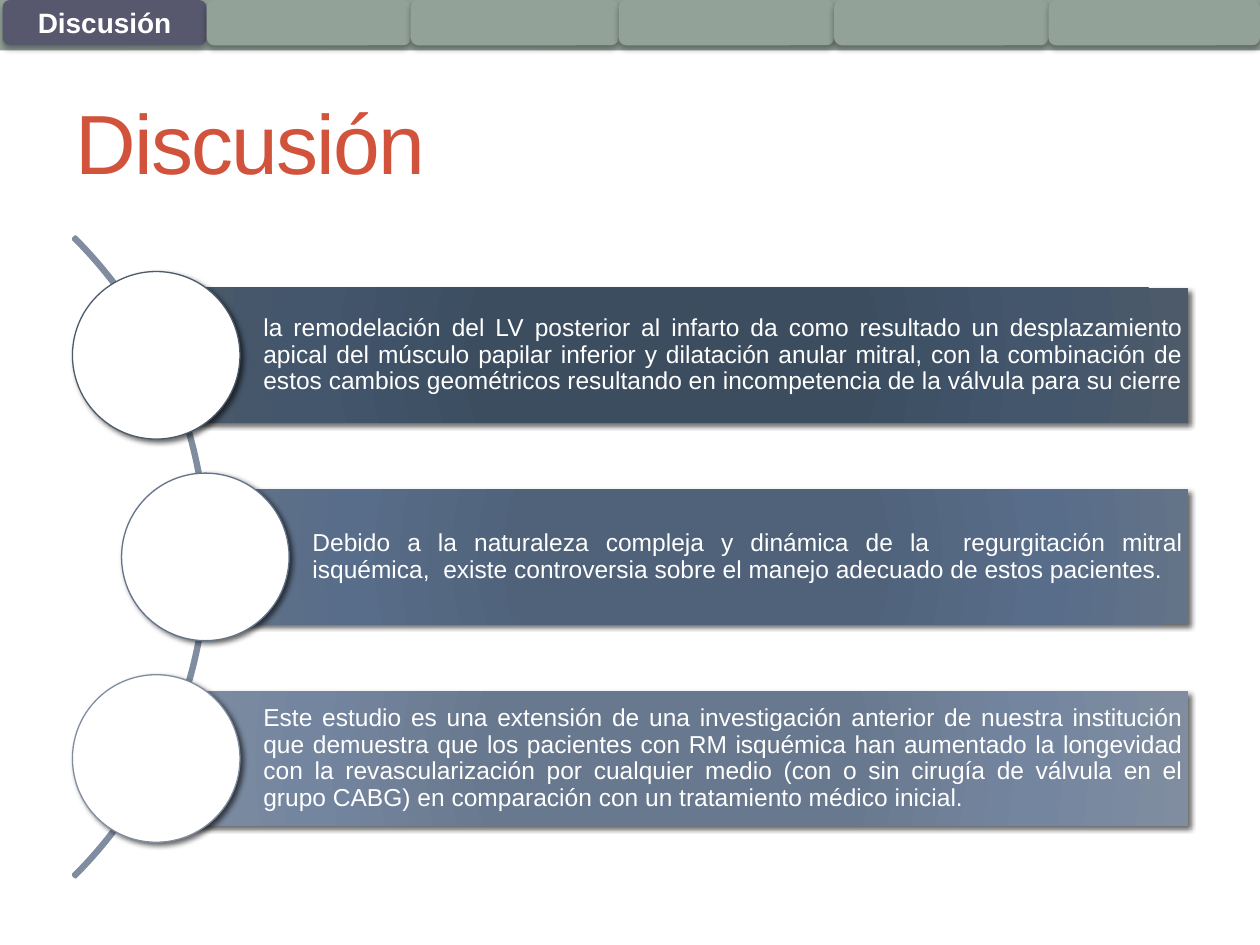
import pptx
import pptx.util
import pptx.dml.color
import pptx.enum.shapes
import pptx.enum.text
import pptx.oxml
import pptx.oxml.ns

RGB = pptx.dml.color.RGBColor
KIND = pptx.enum.shapes.MSO_SHAPE
ALIGN = pptx.enum.text.PP_ALIGN
MIDDLE = pptx.enum.text.MSO_ANCHOR.MIDDLE
Inches, Pt = pptx.util.Inches, pptx.util.Pt
qn = pptx.oxml.ns.qn
NS = pptx.oxml.ns.nsdecls("a")

WHITE = RGB(0xFF, 0xFF, 0xFF)
BLACK = RGB(0, 0, 0)
SAGE = RGB(0x93, 0xA2, 0x99)
PLUM = RGB(0x57, 0x57, 0x6E)
RED = RGB(0xD2, 0x53, 0x3C)
STEEL = RGB(0x80, 0x8D, 0xA0)

WIDE, HIGH = 10, 7.5
TITLE = "Discusión"
EDGES = [0.02, 1.64, 3.26, 4.91, 6.62, 8.32, 10]
STOPS = [0, 34, 70, 100]
ROWS = [
    ("la remodelación del LV posterior al infarto da como resultado un "
     "desplazamiento apical del músculo papilar inferior y dilatación anular "
     "mitral, con la combinación de estos cambios geométricos resultando en "
     "incompetencia de la válvula para su cierre",
     1.24, ["3B4D61", "3C4D60", "43566B", "4C5A6A"]),
    ("Debido a la naturaleza compleja y dinámica de la  regurgitación mitral "
     "isquémica,  existe controversia sobre el manejo adecuado de estos "
     "pacientes.",
     1.63, ["4D627C", "4F627A", "586D89", "637388"]),
    ("Este estudio es una extensión de una investigación anterior de nuestra "
     "institución que demuestra que los pacientes con RM isquémica han "
     "aumentado la longevidad con la revascularización por cualquier medio "
     "(con o sin cirugía de válvula en el grupo CABG) en comparación con un "
     "tratamiento médico inicial.",
     1.24, ["677790", "68788E", "74869F", "808DA0"]),
]
MID, STEP = 4.42, 1.6
BAR, RIGHT, DISC, ARC = 1.07, 9.43, 1.33, 7.18
TAB_SHADE = (32, 3.5, 2.2, 90)
ROW_SHADE = (60, 3, 2, 45)


def add(kind, x, y, w, h, fill=None, line=None, weight=0.75, shade=None):
    item = slide.shapes.add_shape(kind, *map(Inches, (x, y, w, h)))
    if fill is None:
        item.fill.background()
    else:
        item.fill.solid()
        item.fill.fore_color.rgb = fill
    if line is None:
        item.line.fill.background()
    else:
        item.line.color.rgb = line
        item.line.width = Pt(weight)
    item.shadow.inherit = False
    if shade:
        alpha, blur, dist, angle = shade
        item._element.spPr.find(qn("a:effectLst")).append(pptx.oxml.parse_xml(
            f'<a:outerShdw {NS} blurRad="{Pt(blur)}" dist="{Pt(dist)}" '
            f'dir="{angle * 60000}" algn="ctr" rotWithShape="0">'
            f'<a:srgbClr val="{BLACK}"><a:alpha val="{alpha * 1000}"/>'
            '</a:srgbClr></a:outerShdw>'))
    return item


def blend(item, tones):
    """Swap the empty fill of a shape for a radial gradient."""
    stops = "".join(f'<a:gs pos="{pos * 1000}"><a:srgbClr val="{tone}"/></a:gs>'
                    for pos, tone in zip(STOPS, tones))
    props = item._element.spPr
    props.replace(props.find(qn("a:noFill")), pptx.oxml.parse_xml(
        f'<a:gradFill {NS} rotWithShape="1"><a:gsLst>{stops}</a:gsLst>'
        '<a:path path="circle"><a:fillToRect l="100000" t="100000" '
        'r="100000" b="100000"/></a:path></a:gradFill>'))


def write(item, text, size=14, color=WHITE, bold=False, align=ALIGN.LEFT,
          inset=(0.1, 0.05, 0.1, 0.05), lead=1.0, track=0):
    frame = item.text_frame
    frame.word_wrap = True
    frame.vertical_anchor = MIDDLE
    (frame.margin_left, frame.margin_top,
     frame.margin_right, frame.margin_bottom) = map(Inches, inset)
    para = frame.paragraphs[0]
    para.alignment, para.line_spacing = align, lead
    run = para.add_run()
    run.text = text
    font = run.font
    font.name, font.size, font.bold = "Arial", Pt(size), bold
    font.color.rgb = color
    if track:
        run._r.get_or_add_rPr().set("spc", str(track * 100))


deck = pptx.Presentation()
deck.slide_width, deck.slide_height = Inches(WIDE), Inches(HIGH)
slide = deck.slides.add_slide(deck.slide_layouts[6])

add(KIND.RECTANGLE, 0, 0, WIDE, 0.4, SAGE)
for i, (left, end) in enumerate(zip(EDGES, EDGES[1:])):
    tab = add(KIND.ROUNDED_RECTANGLE, left, 0, end - left, 0.36,
              SAGE if i else PLUM, shade=TAB_SHADE)
    if i == 0:
        write(tab, TITLE, size=16, bold=True, align=ALIGN.CENTER)

head = slide.shapes.add_textbox(*map(Inches, (0.5, 0.58, 9, 1.08)))
write(head, TITLE, size=48, color=RED, track=-1)

arc = add(KIND.BLOCK_ARC, 1.65 - ARC, MID - ARC / 2, ARC, ARC,
          line=STEEL, weight=2.08)
for i, value in enumerate((189, 27, 0.003)):
    arc.adjustments[i] = value

for i, (text, left, tones) in enumerate(ROWS):
    y = MID + (i - 1) * STEP
    bar = add(KIND.RECTANGLE, left, y - BAR / 2, RIGHT - left, BAR,
              shade=ROW_SHADE)
    blend(bar, tones)
    write(bar, text, align=ALIGN.JUSTIFY, lead=0.9,
          inset=(0.85, 0.04, 0.04, 0.04))
    add(KIND.OVAL, left - DISC / 2, y - DISC / 2, DISC, DISC, WHITE,
        line=RGB.from_string(tones[-1]), shade=ROW_SHADE)

deck.save("out.pptx")
